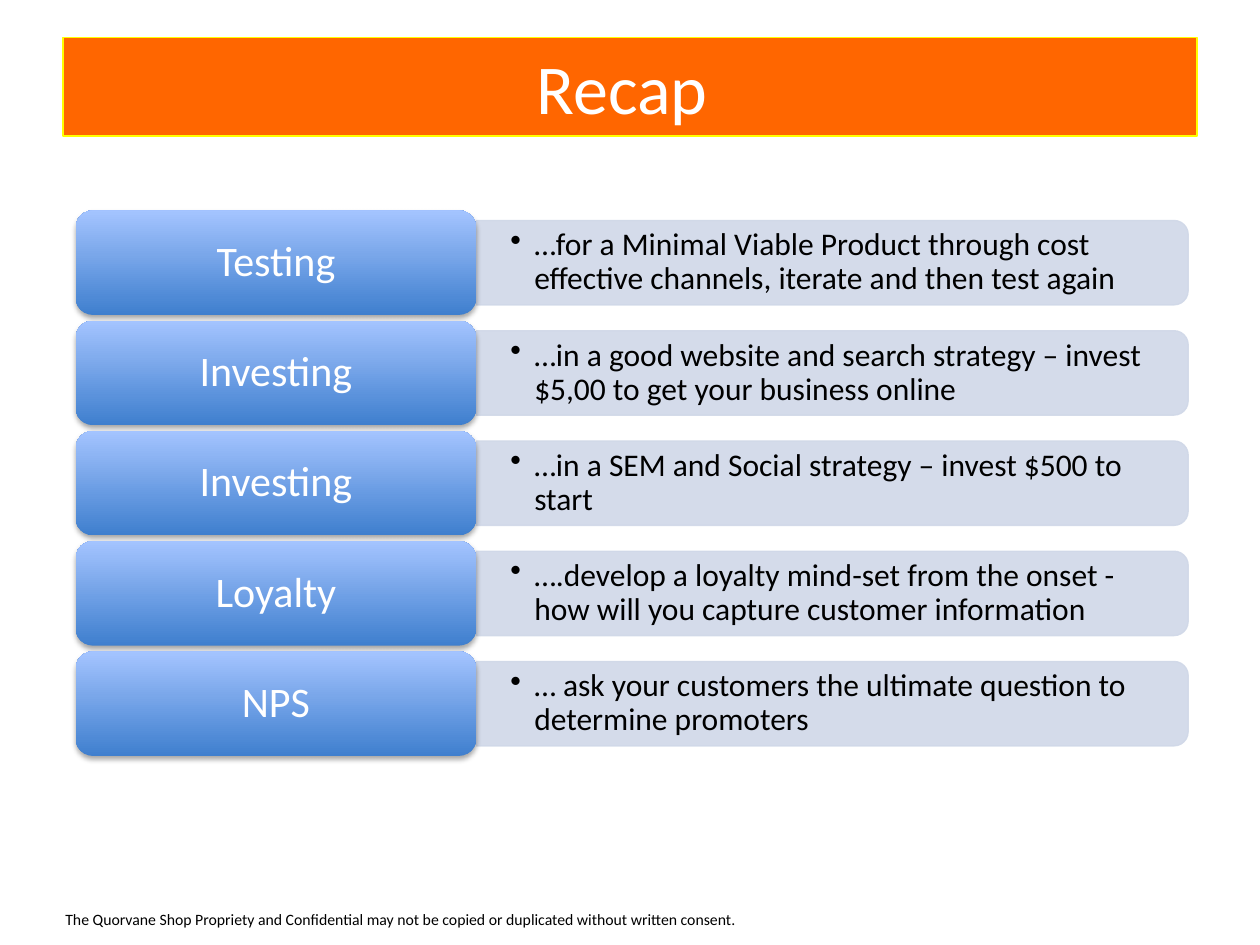
from lxml import etree
from pptx import Presentation
from pptx.dml.color import RGBColor
from pptx.enum.shapes import MSO_SHAPE
from pptx.enum.text import MSO_ANCHOR, PP_ALIGN
from pptx.oxml import parse_xml
from pptx.oxml.ns import nsdecls, qn
from pptx.util import Inches, Pt

RECT = MSO_SHAPE.RECTANGLE
PILL = MSO_SHAPE.ROUNDED_RECTANGLE
BAR = MSO_SHAPE.ROUND_2_SAME_RECTANGLE
MIDDLE = MSO_ANCHOR.MIDDLE
LEFT, CENTER = PP_ALIGN.LEFT, PP_ALIGN.CENTER

ORANGE = RGBColor(0xFF, 0x66, 0x00)
YELLOW = RGBColor(0xFF, 0xFF, 0x00)
PALE = RGBColor(0xD0, 0xD8, 0xE8)
DEEP = RGBColor(0x3F, 0x7F, 0xCE)
LIGHT = RGBColor(0xA4, 0xC4, 0xFF)
WHITE = RGBColor(0xFF, 0xFF, 0xFF)
BLACK = RGBColor(0x00, 0x00, 0x00)
FONT = "Calibri"

TOP, STEP = 1.67, 0.875
PILL_W, PILL_H = 3.18, 0.83
BAR_W, BAR_H = 5.65, 0.67
EDGE = 3.78

ROWS = [
    ("Testing", "…for a Minimal Viable Product through cost effective channels, "
                "iterate and then test again"),
    ("Investing", "…in a good website and search strategy – invest $5,00 to get "
                  "your business online"),
    ("Investing", "…in a SEM and Social strategy – invest $500 to start"),
    ("Loyalty", "….develop a loyalty mind-set from the onset - how will you "
                "capture customer information"),
    ("NPS", "… ask your customers the ultimate question to determine promoters"),
]
NOTICE = ("The Quorvane Shop Propriety and Confidential may not be copied or "
          "duplicated without written consent.")


def add_shape(slide, kind, left, top, width, height):
    shape = slide.shapes.add_shape(
        kind, Inches(left), Inches(top), Inches(width), Inches(height))
    shape.shadow.inherit = False
    return shape


def add_box(slide, left, top, width, height):
    box = slide.shapes.add_textbox(
        Inches(left), Inches(top), Inches(width), Inches(height))
    box.text_frame.word_wrap = True
    return box


def set_text(shape, text, size, color, align=LEFT):
    shape.text_frame.text = text
    para = shape.text_frame.paragraphs[0]
    para.alignment = align
    font = para.runs[0].font
    font.name, font.size, font.color.rgb = FONT, Pt(size), color
    return para


def set_alpha(fill, percent):
    color = fill._xPr.find(qn("a:solidFill"))[0]
    etree.SubElement(color, qn("a:alpha"), val=str(percent * 1000))


def add_title(slide):
    title = add_shape(slide, RECT, 0.5, 0.3, 9, 0.78)
    title.fill.solid()
    title.fill.fore_color.rgb = ORANGE
    title.line.color.rgb = YELLOW
    title.line.width = Pt(0.75)
    title.text_frame.vertical_anchor = MIDDLE
    set_text(title, "Recap ", 40, WHITE, CENTER)


def add_bar(slide, mid):
    # Turned a quarter so that the two round corners face right
    left = EDGE + (BAR_W - BAR_H) / 2
    bar = add_shape(slide, BAR, left, mid - BAR_W / 2, BAR_H, BAR_W)
    bar.rotation = 90
    bar.line.width = Pt(0.75)
    for fill in (bar.fill, bar.line.fill):
        fill.solid()
        fill.fore_color.rgb = PALE
        set_alpha(fill, 90)


def add_point(slide, mid, text):
    box = add_box(slide, EDGE, mid - 0.3, 5.62, 0.6)
    frame = box.text_frame
    frame.vertical_anchor = MIDDLE
    frame.margin_left = frame.margin_right = Inches(0.27)
    frame.margin_top = frame.margin_bottom = Inches(0.14)
    para = set_text(box, text, 18, BLACK)
    para.level = 1
    para.line_spacing = 0.9
    props = para._p.get_or_add_pPr()
    props.set("marL", str(Inches(0.19)))
    props.set("indent", str(-Inches(0.19)))
    etree.SubElement(props, qn("a:buChar"), char="•")


def add_pill(slide, top, text):
    pill = add_shape(slide, PILL, EDGE - PILL_W, top, PILL_W, PILL_H)
    pill.line.fill.background()
    pill.fill.gradient()
    pill.fill.gradient_angle = 90
    for stop, color in zip(pill.fill.gradient_stops, (DEEP, LIGHT)):
        stop.color.rgb = color
    # Soft shadow straight below
    effects = pill._element.spPr.find(qn("a:effectLst"))
    effects.append(parse_xml(
        f'<a:outerShdw {nsdecls("a")} blurRad="{Pt(3.1)}" dist="{Pt(1.8)}" '
        'dir="5400000" rotWithShape="0"><a:srgbClr val="000000">'
        '<a:alpha val="35000"/></a:srgbClr></a:outerShdw>'))
    pill.text_frame.vertical_anchor = MIDDLE
    set_text(pill, text, 24, WHITE, CENTER).line_spacing = 0.9


def main():
    deck = Presentation()
    deck.slide_width, deck.slide_height = Inches(10), Inches(7.5)
    slide = deck.slides.add_slide(deck.slide_layouts[6])

    add_title(slide)

    # Footer notice
    set_text(add_box(slide, 0.42, 7.17, 6.92, 0.25), NOTICE, 9, BLACK)

    # Rows: pale bar, its point, then the pill on top
    for i, (name, point) in enumerate(ROWS):
        top = TOP + i * STEP
        mid = top + PILL_H / 2
        add_bar(slide, mid)
        add_point(slide, mid, point)
        add_pill(slide, top, name)

    deck.save("out.pptx")


if __name__ == "__main__":
    main()
